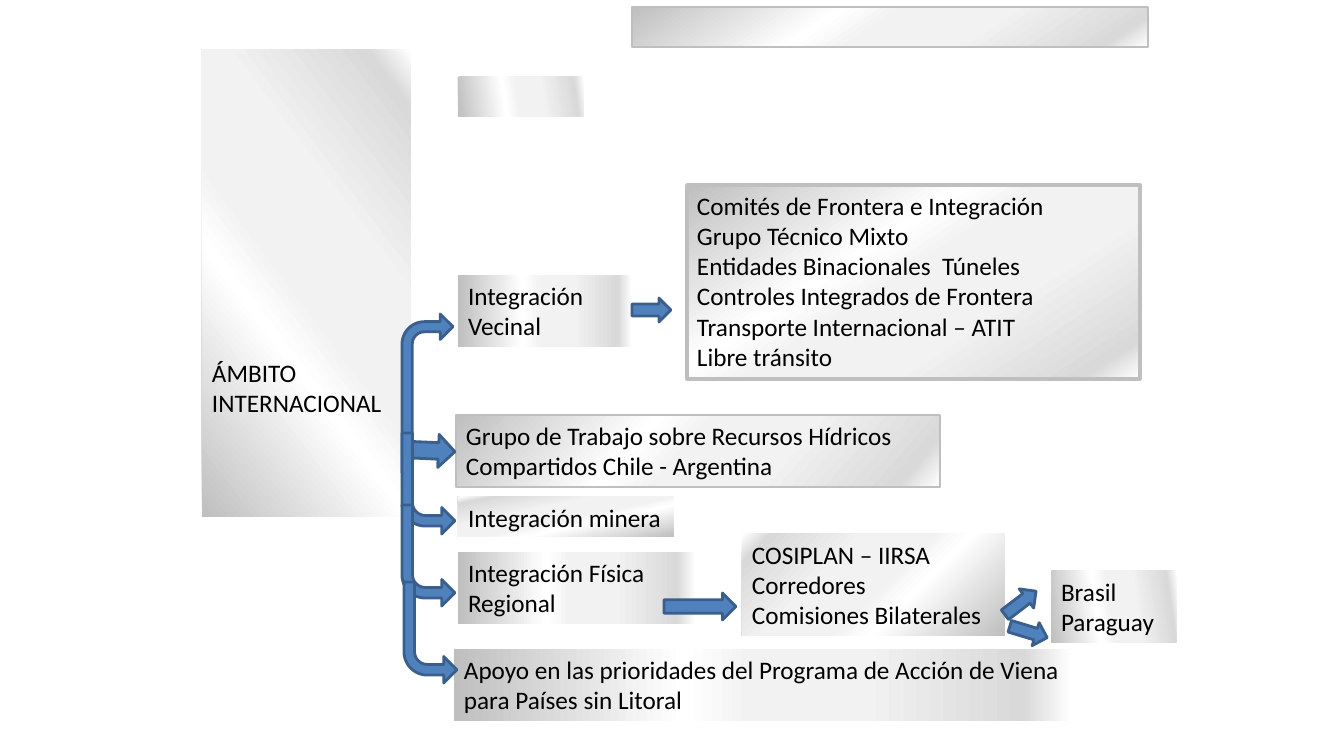
from lxml import etree
from pptx import Presentation
from pptx import util as u
from pptx.dml.color import RGBColor
from pptx.enum import shapes, text
from pptx.oxml.ns import qn

PX = 914400 / 100.8
STOPS = [(0, "BFBFBF"), (37, "FFFFFF"), (48, "F2F2F2"),
         (66, "F2F2F2"), (92, "D9D9D9"), (100, "FFFFFF")]
SILVER, BLUE, NAVY = "BFBFBF", "4F81BD", "3A5F8C"


def px(n):
    return u.Emu(round(n * PX))


def color(value):
    return RGBColor.from_string(value)


def place(sp, x, y, w, h):
    sp.left, sp.top, sp.width, sp.height = map(px, (x, y, w, h))


def metallic(sp, angle):
    sp.fill.background()
    old = sp._element.spPr.find(qn("a:noFill"))
    grad = etree.Element(qn("a:gradFill"), rotWithShape="1")
    stops = etree.SubElement(grad, qn("a:gsLst"))
    for pos, value in STOPS:
        gs = etree.SubElement(stops, qn("a:gs"), pos=str(pos * 1000))
        etree.SubElement(gs, qn("a:srgbClr"), val=value)
    if angle is None:
        way = etree.SubElement(grad, qn("a:path"), path="circle")
        etree.SubElement(way, qn("a:fillToRect"), l="100000", t="100000")
    else:
        etree.SubElement(grad, qn("a:lin"), ang=str(angle * 60000), scaled="0")
    old.getparent().replace(old, grad)


def write(sp, lines, top=5):
    tf = sp.text_frame
    tf.word_wrap = True
    tf.auto_size = text.MSO_AUTO_SIZE.NONE
    tf.vertical_anchor = text.MSO_ANCHOR.TOP
    tf.margin_left = tf.margin_right = px(10)
    tf.margin_top, tf.margin_bottom = px(top), px(5)
    for i, line in enumerate(lines):
        p = tf.add_paragraph() if i else tf.paragraphs[0]
        p.text = line
        p.alignment = text.PP_ALIGN.LEFT
        p.font.size, p.font.name = u.Pt(18), "Calibri"
        p.font.color.rgb = color("000000")


def panel(s, x, y, w, h, angle, lines=(), border=0):
    sp = s.shapes.add_shape(shapes.MSO_SHAPE.RECTANGLE, 0, 0, 0, 0)
    place(sp, x, y, w, h)
    sp.shadow.inherit = False
    metallic(sp, angle)
    if border:
        sp.line.color.rgb = color(SILVER)
        sp.line.width = u.Pt(border)
    else:
        sp.line.fill.background()
    write(sp, lines)


def arrow(s, x, y, w, h, rotation=0, kind=shapes.MSO_SHAPE.RIGHT_ARROW):
    sp = s.shapes.add_shape(kind, px(x), px(y), px(w), px(h))
    sp.rotation = rotation
    sp.shadow.inherit = False
    sp.fill.solid()
    sp.fill.fore_color.rgb = color(BLUE)
    sp.line.color.rgb = color(NAVY)
    sp.line.width = u.Pt(2)
    return sp


def elbow(s, x, y, w, h, down=True):
    sp = arrow(s, x, y, w, h, 180 if down else 0, shapes.MSO_SHAPE.BENT_ARROW)
    for i, value in enumerate((0.2, 0.25, 0.25, 0.44)):
        sp.adjustments[i] = value
    if down:
        sp._element.spPr.find(qn("a:xfrm")).set("flipH", "1")


def scope(s, x, y, w, h):
    title = s.shapes.title
    place(title, x, y, w, h)
    metallic(title, 323)
    write(title, ["ÁMBITO", "INTERNACIONAL"], top=308)


def header(s, x, y):
    panel(s, x, y + 70, 126, 40, 352)
    panel(s, x + 174, y, 516, 40, 56, border=1.75)


def neighbours(s, x, y):
    panel(s, x, y + 90, 174, 72, 0, ["Integración Vecinal"])
    arrow(s, x + 174, y + 113, 39, 24)
    panel(s, x + 229, y, 453, 194, 57, [
        "Comités de Frontera e Integración",
        "Grupo Técnico Mixto",
        "Entidades Binacionales  Túneles",
        "Controles Integrados de Frontera",
        "Transporte Internacional – ATIT",
        "Libre tránsito"], border=2.5)


def resources(s, x, y):
    panel(s, x - 2, y, 484, 72, 41,
          ["Grupo de Trabajo sobre Recursos Hídricos Compartidos Chile - Argentina"],
          border=1.75)
    panel(s, x, y + 82, 216, 40, 258, ["Integración minera"])


def regional(s, x, y):
    panel(s, x, y + 18, 238, 72, 0, ["Integración Física Regional"])
    arrow(s, x + 206, y + 59, 72, 27)
    panel(s, x + 284, y, 263, 102, None,
          ["COSIPLAN – IIRSA", "Corredores", "Comisiones Bilaterales"])
    panel(s, x + 593, y + 37, 126, 72, 352, ["Brasil", "Paraguay"])
    arrow(s, x + 543, y + 57, 39, 24, 322.8)
    arrow(s, x + 551, y + 86, 39, 24, 16.9)


def support(s, x, y):
    panel(s, x, y, 619, 72, 0,
          ["Apoyo en las prioridades del Programa de Acción de Viena "
           "para Países sin Litoral"])


def branches(s, x, y):
    arrow(s, x + 1, y + 120, 52, 33, 2.6)
    elbow(s, x, y, 51, 159, down=False)
    for dx, dy in ((0, 119), (0, 191), (2, 268)):
        elbow(s, x + dx, y + dy, 53, 101)


def main():
    prs = Presentation()
    prs.slide_width, prs.slide_height = px(1344), px(756)
    s = prs.slides.add_slide(prs.slide_layouts[5])
    scope(s, 202, 49, 209, 468)
    header(s, 458, 7)
    neighbours(s, 458, 185)
    resources(s, 458, 415)
    regional(s, 458, 534)
    support(s, 454, 649)
    branches(s, 402, 314)
    prs.save("out.pptx")


if __name__ == "__main__":
    main()
